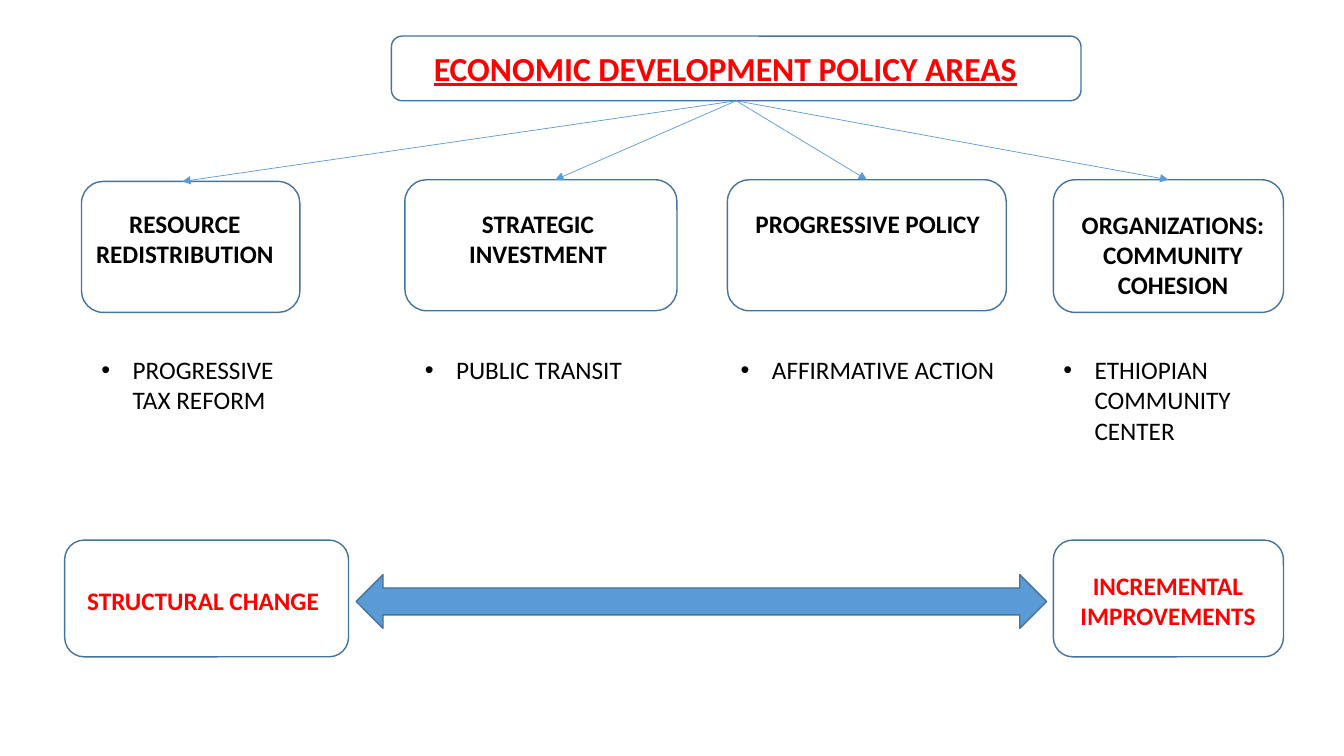
from pptx import Presentation
from pptx.dml.color import RGBColor
from pptx.enum.shapes import MSO_CONNECTOR as Link, MSO_SHAPE as Shape
from pptx.enum.text import MSO_AUTO_SIZE as AutoSize, PP_ALIGN as Align
from pptx.oxml.ns import qn
from pptx.util import Inches, Pt
from lxml.etree import SubElement

BLACK = RGBColor(0x00, 0x00, 0x00)
RED = RGBColor(0xFF, 0x00, 0x00)
BLUE = RGBColor(0x5B, 0x9B, 0xD5)
OUTLINE = RGBColor(0x43, 0x73, 0x9E)

CELL = Inches(7.5) / 9  # the page is a grid of 16 columns by 9 rows
TOP, BOTTOM = 0, 2      # connection sites of a rectangle


def line_rows(count):
    """Rows taken by a text box with this many 18 pt lines."""
    return 0.12 + 0.365 * count


class Diagram:
    heading = {"name": "Calibri", "size": Pt(18), "bold": True}
    plain = heading | {"bold": False}
    title = heading | {"size": Pt(24), "underline": True}

    def __init__(self):
        self.deck = Presentation()
        self.deck.slide_width, self.deck.slide_height = self.grid(16, 9)
        self.page = self.deck.slides.add_slide(self.deck.slide_layouts[6])

    def grid(self, *cells):
        return [round(cell * CELL) for cell in cells]

    def shape(self, kind, place, fill=None):
        box = self.page.shapes.add_shape(kind, *self.grid(*place))
        box.shadow.inherit = False
        if fill is None:
            box.fill.background()
        else:
            box.fill.solid()
            box.fill.fore_color.rgb = fill
        box.line.color.rgb = OUTLINE
        box.line.width = Pt(1)
        return box

    def text(self, words, place, style, color=BLACK, align=Align.CENTER, bullet=False):
        frame = self.page.shapes.add_textbox(*self.grid(*place)).text_frame
        frame.word_wrap = True
        frame.auto_size = AutoSize.SHAPE_TO_FIT_TEXT
        for index, words_in_line in enumerate(words.split("\n")):
            para = frame.add_paragraph() if index else frame.paragraphs[0]
            para.alignment = align
            span = para.add_run()
            span.text = words_in_line
            for name, value in style.items():
                setattr(span.font, name, value)
            span.font.color.rgb = color
            if bullet:
                self.bullet(para)

    def bullet(self, para):
        props = para._p.get_or_add_pPr()
        props.set("marL", str(Inches(0.31)))
        props.set("indent", str(-Inches(0.31)))
        SubElement(props, qn("a:buFont"), typeface="Arial")
        SubElement(props, qn("a:buChar"), char="•")

    def arrow(self, source, target, tip=None):
        """Run to the middle of the target's top, or to the column given as tip."""
        start = source.left + source.width // 2, source.top + source.height
        end = self.grid(tip or 0)[0], target.top
        link = self.page.shapes.add_connector(Link.STRAIGHT, *start, *end)
        link.begin_connect(source, BOTTOM)
        if tip is None:
            link.end_connect(target, TOP)
        link.line.color.rgb = BLUE
        link.line.width = Pt(0.5)
        SubElement(link.line._get_or_add_ln(), qn("a:tailEnd"), type="triangle")
        SubElement(link._element.spPr, qn("a:effectLst"))


# box place, arrow tip column, heading (words, left, top, width, lines),
# example (words, left, width, lines)
AREAS = [
    ((0.97, 2.16, 2.6, 1.56), 2.17,
     ("RESOURCE REDISTRIBUTION", 0.98, 2.42, 2.44, 2),
     ("PROGRESSIVE TAX REFORM", 1.09, 2.34, 2)),
    ((4.82, 2.14, 3.24, 1.56), 6.61,
     ("STRATEGIC\nINVESTMENT", 4.79, 2.42, 3.23, 2),
     ("PUBLIC TRANSIT", 4.94, 3.12, 1)),
    ((8.66, 2.14, 3.32, 1.56), None,
     ("PROGRESSIVE POLICY", 8.7, 2.42, 3.26, 1),
     ("AFFIRMATIVE ACTION", 8.7, 3.42, 1)),
    ((12.54, 2.14, 2.74, 1.58), None,
     ("ORGANIZATIONS: COMMUNITY COHESION", 12.68, 2.43, 2.57, 3),
     ("ETHIOPIAN COMMUNITY CENTER", 12.54, 2.7, 3)),
]
EXAMPLE_TOP = 4.16

# box left and width, words, text left, top, width, lines, alignment
OUTCOMES = [
    (0.77, 3.38, "STRUCTURAL CHANGE", 0.92, 6.91, 3.06, 1, Align.LEFT),
    (12.54, 2.74, "INCREMENTAL IMPROVEMENTS", 12.68, 6.73, 2.45, 2, Align.CENTER),
]


def main():
    diagram = Diagram()

    # Title
    title_box = diagram.shape(Shape.ROUNDED_RECTANGLE, (4.66, 0.43, 8.21, 0.77))
    diagram.text("ECONOMIC DEVELOPMENT POLICY AREAS", (4.82, 0.51, 7.63, 0.6),
                 diagram.title, RED)

    # Policy areas with their examples
    for place, tip, heading, example in AREAS:
        area_box = diagram.shape(Shape.ROUNDED_RECTANGLE, place)
        diagram.arrow(title_box, area_box, tip)
        words, left, top, width, lines = heading
        diagram.text(words, (left, top, width, line_rows(lines)), diagram.heading)
        words, left, width, lines = example
        diagram.text(words, (left, EXAMPLE_TOP, width, line_rows(lines)),
                     diagram.plain, align=Align.LEFT, bullet=True)

    # Range from structural change to incremental improvements
    for box_left, box_width, words, left, top, width, lines, align in OUTCOMES:
        diagram.shape(Shape.ROUNDED_RECTANGLE, (box_left, 6.43, box_width, 1.39))
        diagram.text(words, (left, top, width, line_rows(lines)),
                     diagram.heading, RED, align)
    diagram.shape(Shape.LEFT_RIGHT_ARROW, (4.24, 6.84, 8.22, 0.64), BLUE)

    diagram.deck.save("out.pptx")


if __name__ == "__main__":
    main()
